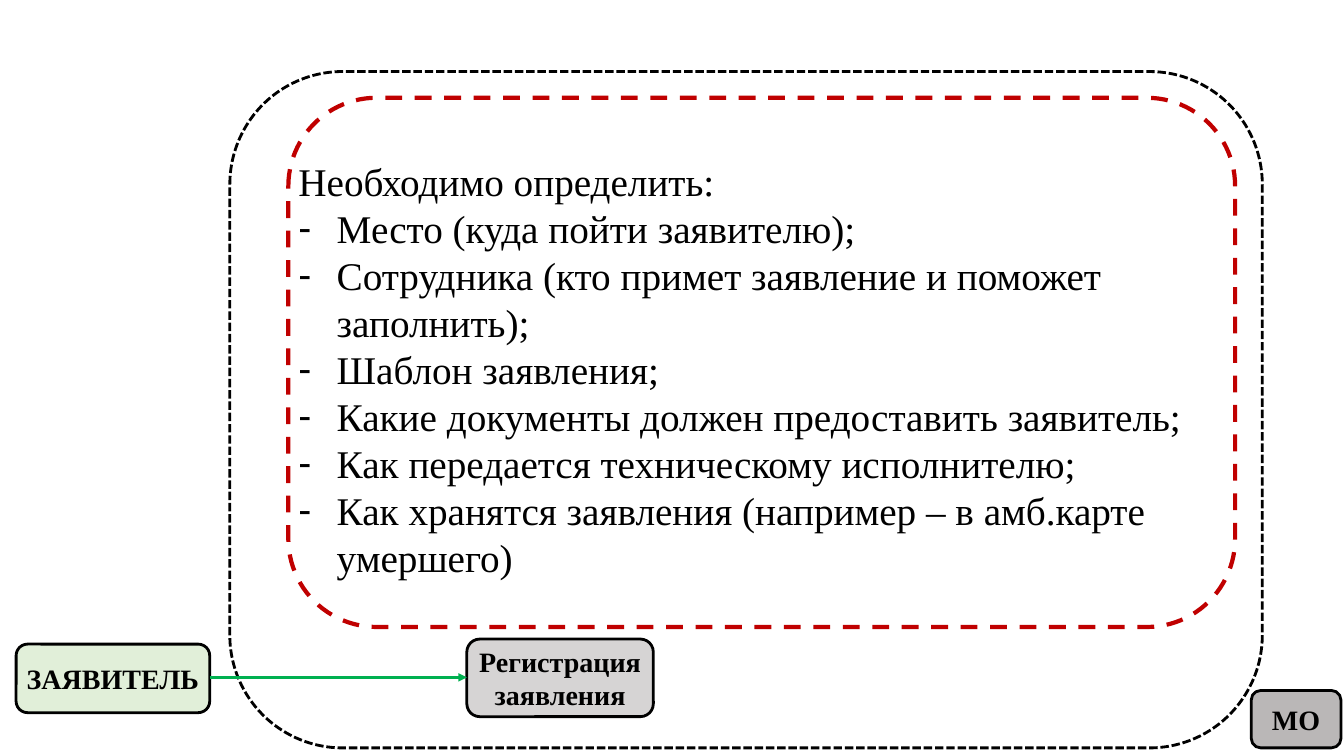
"""Build the slide on what to settle when an application is registered."""
import pptx
import pptx.util
import pptx.dml.color
import pptx.enum.dml
import pptx.enum.shapes
import pptx.enum.text
import pptx.oxml.ns
import lxml.etree

Inches = pptx.util.Inches
Pt = pptx.util.Pt
qn = pptx.oxml.ns.qn
DASH = pptx.enum.dml.MSO_LINE
ANCHOR = pptx.enum.text.MSO_ANCHOR


def color(code):
    return pptx.dml.color.RGBColor.from_string(code)


def style(para, size, bold):
    for run in para.runs:
        run.font.name = "Times New Roman"
        run.font.size = Pt(size)
        run.font.bold = bold
        run.font.color.rgb = color("000000")


deck = pptx.Presentation()
deck.slide_width = Inches(13.33)
deck.slide_height = Inches(7.5)
slide = deck.slides.add_slide(deck.slide_layouts[1])
title = slide.shapes.title.element
title.getparent().remove(title)

frames = [
    (2.28, 0.71, 10.24, 6.71, "000000", 2, DASH.SQUARE_DOT),
    (2.86, 0.97, 9.39, 5.25, "C00000", 3, DASH.DASH),
]
for left, top, width, height, code, weight, dash in frames:
    frame = slide.shapes.add_shape(
        pptx.enum.shapes.MSO_SHAPE.ROUNDED_RECTANGLE,
        Inches(left), Inches(top), Inches(width), Inches(height))
    frame.shadow.inherit = False
    frame.fill.background()
    frame.line.color.rgb = color(code)
    frame.line.width = Pt(weight)
    frame.line.dash_style = dash

boxes = [
    ("ЗАЯВИТЕЛЬ", 0.16, 6.39, 1.92, 0.68, "C5E0B4"),
    ("Регистрация заявления", 4.63, 6.34, 1.85, 0.77, "AFABAB"),
    ("МО", 12.41, 6.85, 0.89, 0.57, "767171"),
]
for label, left, top, width, height, code in boxes:
    box = slide.shapes.add_shape(
        pptx.enum.shapes.MSO_SHAPE.ROUNDED_RECTANGLE,
        Inches(left), Inches(top), Inches(width), Inches(height))
    box.shadow.inherit = False
    box.fill.solid()
    box.fill.fore_color.rgb = color(code)
    tint = box.element.spPr.find(qn("a:solidFill"))[0]
    lxml.etree.SubElement(tint, qn("a:alpha"), val="50000")
    box.line.color.rgb = color("000000")
    box.line.width = Pt(2)
    text = box.text_frame
    text.text = label
    text.word_wrap = True
    text.vertical_anchor = ANCHOR.MIDDLE
    text.margin_left = text.margin_right = Inches(0.05)
    text.margin_top = text.margin_bottom = 0
    text.paragraphs[0].alignment = pptx.enum.text.PP_ALIGN.CENTER
    style(text.paragraphs[0], 20, True)

arrow = slide.shapes.add_connector(
    pptx.enum.shapes.MSO_CONNECTOR.STRAIGHT,
    Inches(2.08), Inches(6.72), Inches(4.63), Inches(6.72))
arrow.line.color.rgb = color("00B050")
arrow.line.width = Pt(2)
lxml.etree.SubElement(arrow.line._get_or_add_ln(), qn("a:tailEnd"), type="triangle")
lxml.etree.SubElement(arrow.element.spPr, qn("a:effectLst"))

lines = [
    "Необходимо определить:",
    "Место (куда пойти заявителю);",
    "Сотрудника (кто примет заявление и поможет заполнить);",
    "Шаблон заявления;",
    "Какие документы должен предоставить заявитель;",
    "Как передается техническому исполнителю;",
    "Как хранятся заявления (например – в амб.карте умершего)",
]
body = slide.placeholders[1]
body.left, body.top = Inches(2.86), Inches(1.51)
body.width, body.height = Inches(9.39), Inches(4.34)
text = body.text_frame
text.text = "\n".join(lines)
text.word_wrap = True
text.auto_size = pptx.enum.text.MSO_AUTO_SIZE.NONE
text.vertical_anchor = ANCHOR.TOP
for place, para in enumerate(text.paragraphs):
    para.space_before = para.space_after = Pt(0)
    para.line_spacing = 1.0
    style(para, 28, False)
    props = para._p.get_or_add_pPr()
    if place == 0:
        props.set("marL", "0")
        props.set("indent", "0")
        lxml.etree.SubElement(props, qn("a:buNone"))
    else:
        props.set("marL", str(Inches(0.38)))
        props.set("indent", str(-Inches(0.38)))
        lxml.etree.SubElement(props, qn("a:buFontTx"))
        lxml.etree.SubElement(props, qn("a:buChar"), char="-")

deck.save("out.pptx")
